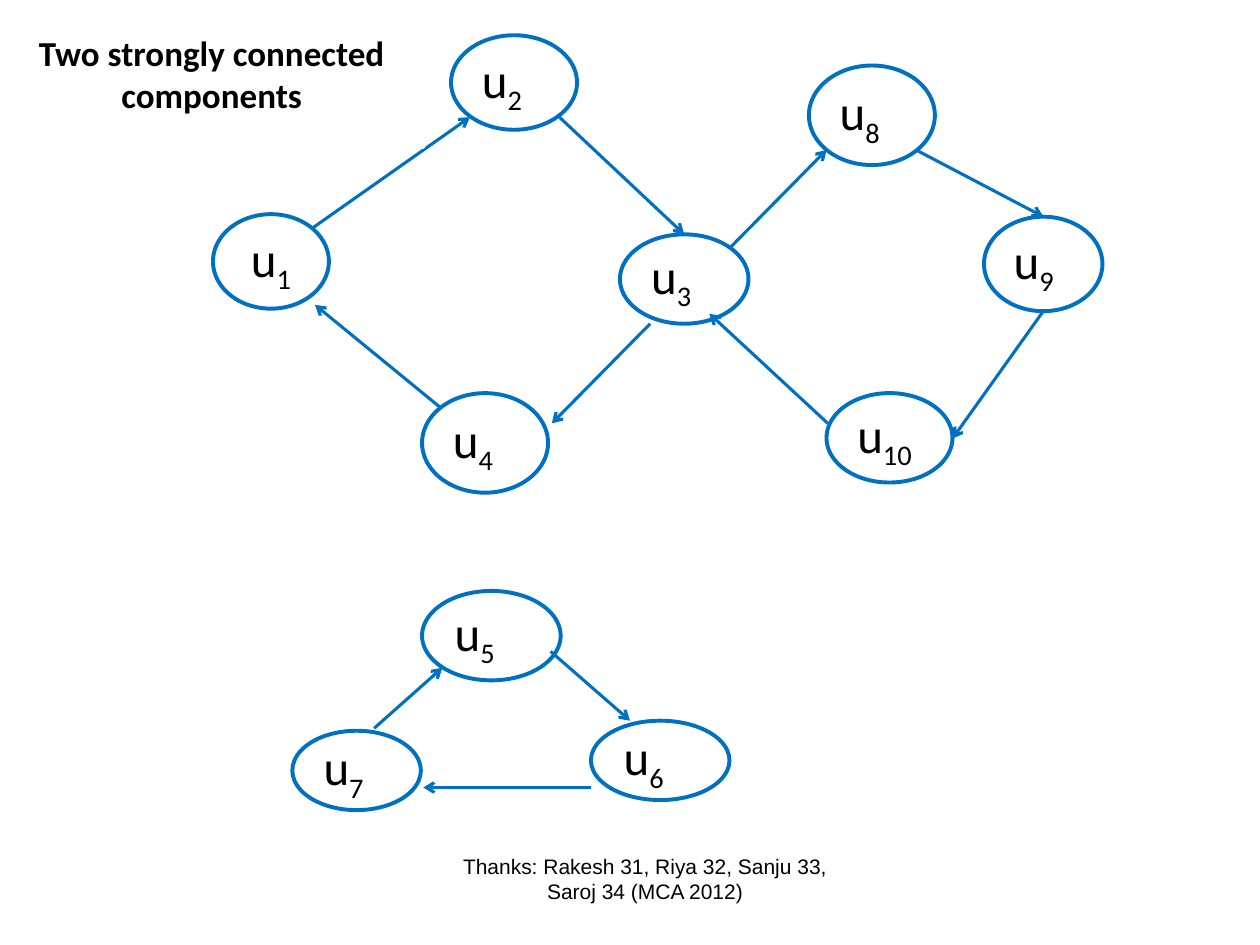
from dataclasses import dataclass

from pptx import Presentation
from pptx import util as u
from pptx.dml.color import RGBColor
from pptx.enum import shapes, text
from pptx.oxml.ns import qn
from lxml import etree

PX = 9144  # EMU in one px, 100 px to the inch


@dataclass(frozen=True)
class Theme:
    ink: RGBColor = RGBColor(0, 0, 0)
    paper: RGBColor = RGBColor(255, 255, 255)
    blue: RGBColor = RGBColor(0x00, 0x70, 0xC0)
    body: str = "Calibri"
    small: str = "Arial"
    title_pt: int = 20
    node_pt: int = 28
    credit_pt: int = 12
    node_line: float = 2.25
    edge_line: float = 1.75
    title_line: float = 2


class GraphSlide:
    def __init__(self, prs, theme):
        self.theme = theme
        self.s = prs.slides.add_slide(prs.slide_layouts[5])

    def outline(self, sp, color, width):
        sp.fill.solid()
        sp.fill.fore_color.rgb = self.theme.paper
        sp.line.color.rgb = color
        sp.line.width = u.Pt(width)

    def label(self, sp, words, font, size, align, bold=False):
        tf = sp.text_frame
        tf.text = words
        tf.word_wrap = True
        tf.auto_size = text.MSO_AUTO_SIZE.NONE
        tf.vertical_anchor = text.MSO_ANCHOR.MIDDLE
        p = tf.paragraphs[0]
        p.alignment = align
        self.style(p.runs[0], font, size, bold)
        return p

    def style(self, r, font, size, bold=False):
        r.font.name = font
        r.font.size = u.Pt(size)
        r.font.bold = bold
        r.font.color.rgb = self.theme.ink

    def title(self, words, x, y, w, h):
        """Place the title in front of everything drawn so far."""
        t, sp = self.theme, self.s.shapes.title
        sp.left, sp.top, sp.width, sp.height = (v * PX for v in (x, y, w, h))
        self.outline(sp, t.paper, t.title_line)
        self.label(sp, words, t.body, t.title_pt, text.PP_ALIGN.CENTER, True)
        sp.element.getparent().append(sp.element)

    def node(self, index, x, y, w, h, align=text.PP_ALIGN.LEFT):
        t = self.theme
        sp = self.s.shapes.add_shape(
            shapes.MSO_SHAPE.OVAL, x * PX, y * PX, w * PX, h * PX)
        sp.shadow.inherit = False
        self.outline(sp, t.blue, t.node_line)
        p = self.label(sp, "u", t.body, t.node_pt, align)
        r = p.add_run()
        r.text = str(index)
        self.style(r, t.body, t.node_pt)
        r.font._element.set("baseline", "-25000")

    def edge(self, x1, y1, x2, y2):
        t = self.theme
        line = self.s.shapes.add_connector(
            shapes.MSO_CONNECTOR.STRAIGHT, x1 * PX, y1 * PX, x2 * PX, y2 * PX)
        line.line.color.rgb = t.blue
        line.line.width = u.Pt(t.edge_line)
        properties = line.element.spPr
        etree.SubElement(properties.find(qn("a:ln")), qn("a:tailEnd"), type="arrow")
        etree.SubElement(properties, qn("a:effectLst"))

    def credit(self, words, x, y, w, h, raise_by):
        """Add small centred text, lifted by a deep bottom inset."""
        t = self.theme
        sp = self.s.shapes.add_textbox(x * PX, y * PX, w * PX, h * PX)
        self.label(sp, words, t.small, t.credit_pt, text.PP_ALIGN.CENTER)
        sp.text_frame.margin_bottom = raise_by * PX


NODES = {
    1: (169, 170, 92, 75, text.PP_ALIGN.CENTER),
    2: (358, 28, 100, 75),
    3: (492, 186, 102, 71),
    4: (335, 312, 100, 79),
    5: (335, 469, 110, 71),
    6: (469, 572, 110, 63),
    7: (232, 580, 102, 63),
    8: (642, 52, 100, 79),
    9: (781, 172, 94, 75),
    10: (656, 312, 100, 71),
}

EDGES = [
    (248, 181, 373, 93),   # u1 to u2
    (444, 93, 543, 186),   # u2 to u3
    (516, 257, 438, 336),  # u3 to u4
    (349, 323, 250, 242),  # u4 to u1
    (580, 196, 656, 119),  # u3 to u8
    (727, 119, 828, 172),  # u8 to u9
    (828, 247, 756, 348),  # u9 to u10
    (657, 336, 563, 249),  # u10 to u3
    (437, 517, 500, 572),  # u5 to u6
    (469, 625, 336, 625),  # u6 to u7
    (297, 578, 351, 530),  # u7 to u5
]


def main():
    prs = Presentation()
    prs.slide_width, prs.slide_height = 1000 * PX, 750 * PX
    slide = GraphSlide(prs, Theme())
    for index, place in NODES.items():
        slide.node(index, *place)
    for ends in EDGES:
        slide.edge(*ends)
    slide.credit("Thanks: Rakesh 31, Riya 32, Sanju 33, Saroj 34 (MCA 2012)",
                 352, 690, 320, 60, raise_by=50)
    slide.title("Two strongly connected components", 0, 0, 336, 117)
    prs.save("out.pptx")


if __name__ == "__main__":
    main()
